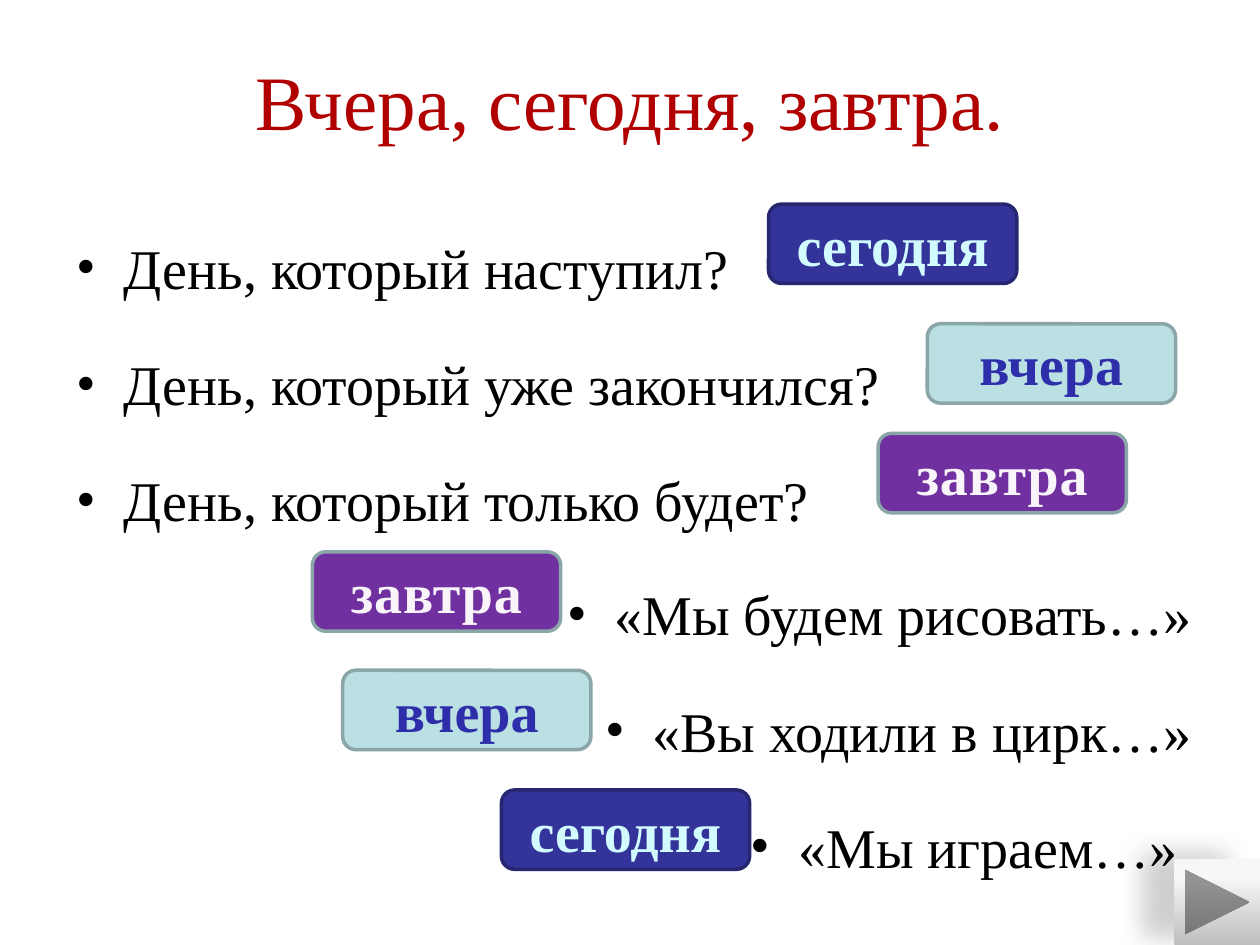
from typing import NamedTuple

from lxml import etree
from pptx import Presentation
from pptx.dml.color import RGBColor
from pptx.enum.shapes import MSO_SHAPE
from pptx.enum.text import MSO_ANCHOR, PP_ALIGN
from pptx.oxml import parse_xml
from pptx.oxml.ns import nsdecls, qn
from pptx.util import Pt

ROUNDED = MSO_SHAPE.ROUNDED_RECTANGLE
FORWARD_BUTTON = MSO_SHAPE.ACTION_BUTTON_FORWARD_OR_NEXT
LEFT, CENTER, RIGHT = PP_ALIGN.LEFT, PP_ALIGN.CENTER, PP_ALIGN.RIGHT
MIDDLE = MSO_ANCHOR.MIDDLE
FONT = "Times New Roman"
TEXT_SIZE = 32
INDENT = 27
ANSWER_WIDTH, ANSWER_HEIGHT = 141.84, 45.36


class Box(NamedTuple):
    left: float
    top: float
    width: float
    height: float


class AnswerStyle(NamedTuple):
    word: str
    fill: str
    line: str
    text: str
    spacing: float = 0


class Answer(NamedTuple):
    style: AnswerStyle
    left: float
    top: float


TODAY = AnswerStyle("сегодня", "333399", "262671", "D1FBFF")
YESTERDAY = AnswerStyle("вчера", "BBE0E3", "8AA6A8", "2E2EAA")
TOMORROW = AnswerStyle("завтра", "7030A0", "8AA6A8", "F8F4FA", 0.5)

QUESTIONS = ["День, который наступил?", "День, который уже закончился?",
             "День, который только будет?"]
PHRASES = ["«Мы будем рисовать…»", "«Вы ходили в цирк…»", "«Мы играем…» "]
ANSWERS = [
    Answer(TODAY, 439.2, 116.64),
    Answer(YESTERDAY, 529.92, 185.04),
    Answer(TOMORROW, 501.84, 247.68),
    Answer(TODAY, 286.56, 451.44),
    Answer(YESTERDAY, 195.84, 383.04),
    Answer(TOMORROW, 178.56, 315.36),
]


def color(value: str) -> RGBColor:
    return RGBColor.from_string(value)


def place(box: Box) -> list:
    return [Pt(length) for length in box]


def style_font(font, size: float, value: str, bold: bool = False) -> None:
    font.name = FONT
    font.size = Pt(size)
    font.bold = bold
    font.color.rgb = color(value)


def add_title(slide, box: Box, text: str) -> None:
    frame = slide.shapes.add_textbox(*place(box)).text_frame
    frame.word_wrap = True
    frame.vertical_anchor = MIDDLE
    frame.text = text
    heading = frame.paragraphs[0]
    heading.alignment = CENTER
    style_font(heading.runs[0].font, 44, "B00000")


def add_bullets(slide, box: Box, lines: list[str], alignment) -> None:
    frame = slide.shapes.add_textbox(*place(box)).text_frame
    frame.word_wrap = True
    frame.margin_top = Pt(8.4)
    frame.text = "\n".join(lines)
    for number, line in enumerate(frame.paragraphs):
        line.alignment = alignment
        line.line_spacing = 1.5
        if number:
            line.space_before = Pt(8.8)
        properties = line._p.get_or_add_pPr()
        properties.set("marL", str(Pt(INDENT)))
        properties.set("indent", str(-Pt(INDENT)))
        etree.SubElement(properties, qn("a:buFont")).set("typeface", FONT)
        etree.SubElement(properties, qn("a:buChar")).set("char", "•")
        style_font(line.runs[0].font, TEXT_SIZE, "000000")


def add_answer(slide, answer: Answer) -> None:
    style = answer.style
    box = Box(answer.left, answer.top, ANSWER_WIDTH, ANSWER_HEIGHT)
    card = slide.shapes.add_shape(ROUNDED, *place(box))
    card.shadow.inherit = False
    card.fill.solid()
    card.fill.fore_color.rgb = color(style.fill)
    card.line.color.rgb = color(style.line)
    card.line.width = Pt(2)
    frame = card.text_frame
    frame.vertical_anchor = MIDDLE
    frame.text = style.word
    word = frame.paragraphs[0]
    word.alignment = CENTER
    font = word.runs[0].font
    style_font(font, TEXT_SIZE, style.text, bold=True)
    if style.spacing:
        word.runs[0]._r.get_or_add_rPr().set("spc", str(int(style.spacing * 100)))


def add_forward_button(slide, box: Box) -> None:
    button = slide.shapes.add_shape(FORWARD_BUTTON, *place(box))
    button.shadow.inherit = False
    button.line.fill.background()
    properties = button._element.spPr
    button.fill.gradient()
    gradient = properties.find(qn("a:gradFill"))
    properties.replace(gradient, parse_xml(
        f'<a:gradFill {nsdecls("a")}><a:gsLst>'
        '<a:gs pos="0"><a:srgbClr val="BEBEBE"/></a:gs>'
        '<a:gs pos="80000"><a:srgbClr val="F7F7F7"/></a:gs>'
        '<a:gs pos="100000"><a:srgbClr val="F8F8F8"/></a:gs>'
        '</a:gsLst><a:lin ang="16200000" scaled="0"/></a:gradFill>'))
    # Soft shadow towards the left
    properties.find(qn("a:effectLst")).append(parse_xml(
        f'<a:outerShdw {nsdecls("a")} blurRad="{Pt(14.5)}" dist="{Pt(19)}" '
        f'dir="{192 * 60000}" algn="ctr" rotWithShape="0">'
        '<a:srgbClr val="000000"><a:alpha val="18000"/></a:srgbClr></a:outerShdw>'))


def main() -> None:
    presentation = Presentation()
    presentation.slide_width, presentation.slide_height = Pt(720), Pt(540)
    slide = presentation.slides.add_slide(presentation.slide_layouts[6])

    # Title and the two lists
    add_title(slide, Box(36, 25.92, 648, 62.64), "Вчера, сегодня, завтра.")
    add_bullets(slide, Box(36.72, 105.84, 648, 211.68), QUESTIONS, LEFT)
    add_bullets(slide, Box(121.68, 303.84, 566.64, 180), PHRASES, RIGHT)

    # Answer cards
    for answer in ANSWERS:
        add_answer(slide, answer)

    # Navigation
    add_forward_button(slide, Box(671.04, 491.04, 48.96, 48.96))
    presentation.save("out.pptx")


if __name__ == "__main__":
    main()
